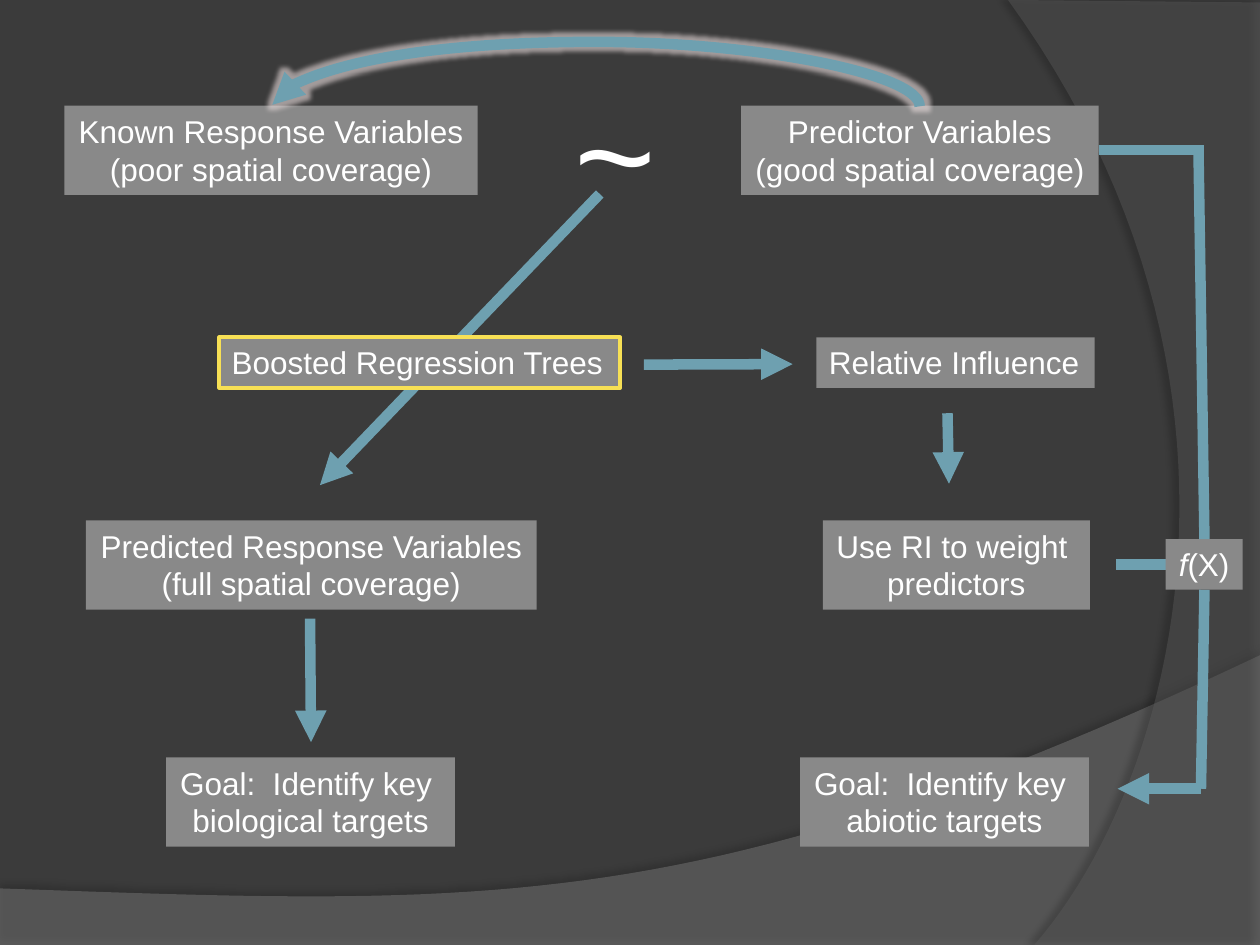
from pptx import Presentation
from pptx.dml.color import RGBColor
from pptx.enum.shapes import MSO_CONNECTOR as Link, MSO_SHAPE as Preset
from pptx.enum.text import MSO_ANCHOR as Anchor, MSO_AUTO_SIZE as Fit, PP_ALIGN as Align
from pptx.oxml import parse_xml
from pptx.oxml.ns import nsdecls, qn
from pptx.util import Cm, Pt


def colour(code):
    """Return the colour for a hex string."""
    return RGBColor.from_string(code)


def effect(tag, attributes, code, opacity):
    """Return an effect element such as a glow or an outer shadow."""
    return parse_xml(
        f'<a:{tag} {nsdecls("a")} {attributes}><a:srgbClr val="{code}">'
        f'<a:alpha val="{opacity * 1000}"/></a:srgbClr></a:{tag}>')


def bezier(start, first, second, end, steps=48):
    """Return points along a cubic curve, without its start."""
    curve = []
    for step in range(1, steps + 1):
        t = step / steps
        weights = ((1 - t) ** 3, 3 * t * (1 - t) ** 2, 3 * t ** 2 * (1 - t), t ** 3)
        curve.append(tuple(sum(w * p[axis] for w, p in zip(weights, (start, first, second, end)))
                           for axis in (0, 1)))
    return curve


def write(frame, text, size=18, align=Align.CENTER, wrap=False, italic_lead=0):
    """Fill a text frame with one paragraph per line of text."""
    frame.word_wrap = wrap
    frame.auto_size = Fit.SHAPE_TO_FIT_TEXT
    frame.vertical_anchor = Anchor.TOP
    for index, line in enumerate(text.split("\n")):
        paragraph = frame.add_paragraph() if index else frame.paragraphs[0]
        paragraph.alignment = align
        for part, italic in ((line[:italic_lead], True), (line[italic_lead:], False)):
            if part:
                run = paragraph.add_run()
                run.text = part
                run.font.name = "Arial"
                run.font.size = Pt(size)
                run.font.italic = italic
                run.font.color.rgb = colour("FFFFFF")


class Diagram:
    """Holds the style and the current slide."""

    backdrop, box_fill, arrow, highlight = "3B3B3B", "898989", "6EA0B0", "F7E055"

    def __init__(self, slide):
        """Start on a slide and paint its background."""
        self.shapes = slide.shapes
        slide.background.fill.solid()
        slide.background.fill.fore_color.rgb = colour(self.backdrop)

    def swoosh(self, points, code, opacity, shadow_opacity, shadow_distance, angle):
        """Draw a translucent background form with a soft shadow."""
        outline = [(Cm(x), Cm(y)) for x, y in points]
        builder = self.shapes.build_freeform(*outline[0])
        builder.add_line_segments(outline[1:], close=True)
        form = builder.convert_to_shape()
        form.fill.solid()
        form.fill.fore_color.rgb = colour(code)
        form.line.fill.background()
        form.shadow.inherit = False
        properties = form._element.spPr
        alpha = parse_xml(f'<a:alpha {nsdecls("a")} val="{opacity * 1000}"/>')
        properties.find(f'{qn("a:solidFill")}/{qn("a:srgbClr")}').append(alpha)
        properties.find(qn("a:effectLst")).append(effect(
            "outerShdw",
            f'blurRad="{Pt(4)}" dist="{Pt(shadow_distance)}" dir="{angle * 60000}"',
            "000000", shadow_opacity))

    def box(self, text, left, top, width, height=1.8, border=None, **style):
        """Draw a grey box with its text."""
        box = self.shapes.add_shape(Preset.RECTANGLE, Cm(left), Cm(top), Cm(width), Cm(height))
        box.shadow.inherit = False
        box.fill.solid()
        box.fill.fore_color.rgb = colour(self.box_fill)
        if border:
            box.line.color.rgb = colour(border)
            box.line.width = Pt(2.25)
        else:
            box.line.fill.background()
        write(box.text_frame, text, **style)

    def label(self, text, left, top, width, height, **style):
        """Place text without a box."""
        area = self.shapes.add_textbox(Cm(left), Cm(top), Cm(width), Cm(height))
        write(area.text_frame, text, **style)

    def link(self, start, end, head=True, kind=Link.STRAIGHT):
        """Draw a thick connector, with an arrowhead if asked."""
        connector = self.shapes.add_connector(kind, *map(Cm, start + end))
        connector.line.color.rgb = colour(self.arrow)
        connector.line.width = Pt(6)
        if head:
            connector.line._get_or_add_ln().append(
                parse_xml(f'<a:tailEnd {nsdecls("a")} type="triangle"/>'))
        connector._element.spPr.append(parse_xml(f'<a:effectLst {nsdecls("a")}/>'))
        return connector

    def arch(self, left, right, base, rise, drop=0.03):
        """Draw a glowing curved arrow from right to left, above its ends."""
        span, middle = right - left, (left + right) / 2
        x, y = middle - drop / 2, base - span / 2
        curve = self.link((x, y), (x + drop, y + span), kind=Link.CURVE)
        properties = curve._element.spPr
        frame = properties.find(qn("a:xfrm"))
        frame.set("rot", str(270 * 60000))
        frame.set("flipV", "1")
        geometry = properties.find(qn("a:prstGeom"))
        for values in geometry.findall(qn("a:avLst")):
            geometry.remove(values)
        geometry.append(parse_xml(
            f'<a:avLst {nsdecls("a")}><a:gd name="adj1" '
            f'fmla="val {round(rise / drop * 100000)}"/></a:avLst>'))
        properties.find(qn("a:effectLst")).append(
            effect("glow", f'rad="{Pt(5)}"', "E8DCDC", 60))


def main():
    """Build the slide and save it."""
    deck = Presentation()
    deck.slide_width, deck.slide_height = Cm(25.4), Cm(19.05)
    diagram = Diagram(deck.slides.add_slide(deck.slide_layouts[6]))

    band = bezier((25.4, 13.21), (14.2, 18.52), (9.93, 18.26), (0, 17.91))
    diagram.swoosh([(0, 19.05), (25.4, 19.05), (25.4, 13.21)] + band, "7F7F7F", 45, 35, 3.5, 270)
    side = bezier((20.85, 19.05), (23.75, 15.72), (25.86, 7.62), (20.32, 0))
    diagram.swoosh([(25.4, 0.05), (25.4, 19.05), (20.85, 19.05)] + side, "5E5E5E", 40, 45, 4, 180)

    variables, middle, predictions, goals = 2.13, 6.8, 10.49, 15.27
    diagram.box("Known Response Variables\n(poor spatial coverage)", 1.3, variables, 8.33)
    diagram.box("Predictor Variables\n(good spatial coverage)", 14.94, variables, 7.21)
    diagram.label("~", 11.33, 1.19, 1.68, 3.68, size=80, align=Align.LEFT, wrap=True)
    diagram.arch(5.49, 18.54, variables, 1.3)

    diagram.link((12.09, 3.91), (6.45, 9.78))
    diagram.box("Boosted Regression Trees ", 4.42, middle, 8.08, 1.02,
                border=diagram.highlight, align=Align.LEFT)
    diagram.box("Predicted Response Variables\n(full spatial coverage)", 1.73, predictions, 9.09)
    diagram.box("Relative Influence", 16.46, middle, 5.61, 1.02, align=Align.LEFT)
    diagram.box("Use RI to weight \npredictors", 16.59, predictions, 5.38)
    for start, end in (((12.98, 7.35), (15.98, 7.34)), ((6.25, 12.47), (6.27, 14.96)),
                       ((19.1, 8.33), (19.13, 9.75)), ((22.5, 11.38), (24.49, 11.38))):
        diagram.link(start, end)
    diagram.box("f(X)", 23.5, 10.87, 1.55, 1.02, italic_lead=1)

    for start, end in (((22.15, 3.02), (24.28, 3.02)), ((24.16, 3.02), (24.28, 10.87)),
                       ((24.21, 15.9), (24.28, 11.89))):
        diagram.link(start, end, head=False)
    diagram.link((24.21, 15.9), (22.53, 15.9))
    for target, left in (("abiotic", 16.13), ("biological", 3.35)):
        diagram.box(f"Goal:  Identify key \n{target} targets", left, goals, 5.82)

    deck.save("out.pptx")


if __name__ == "__main__":
    main()
